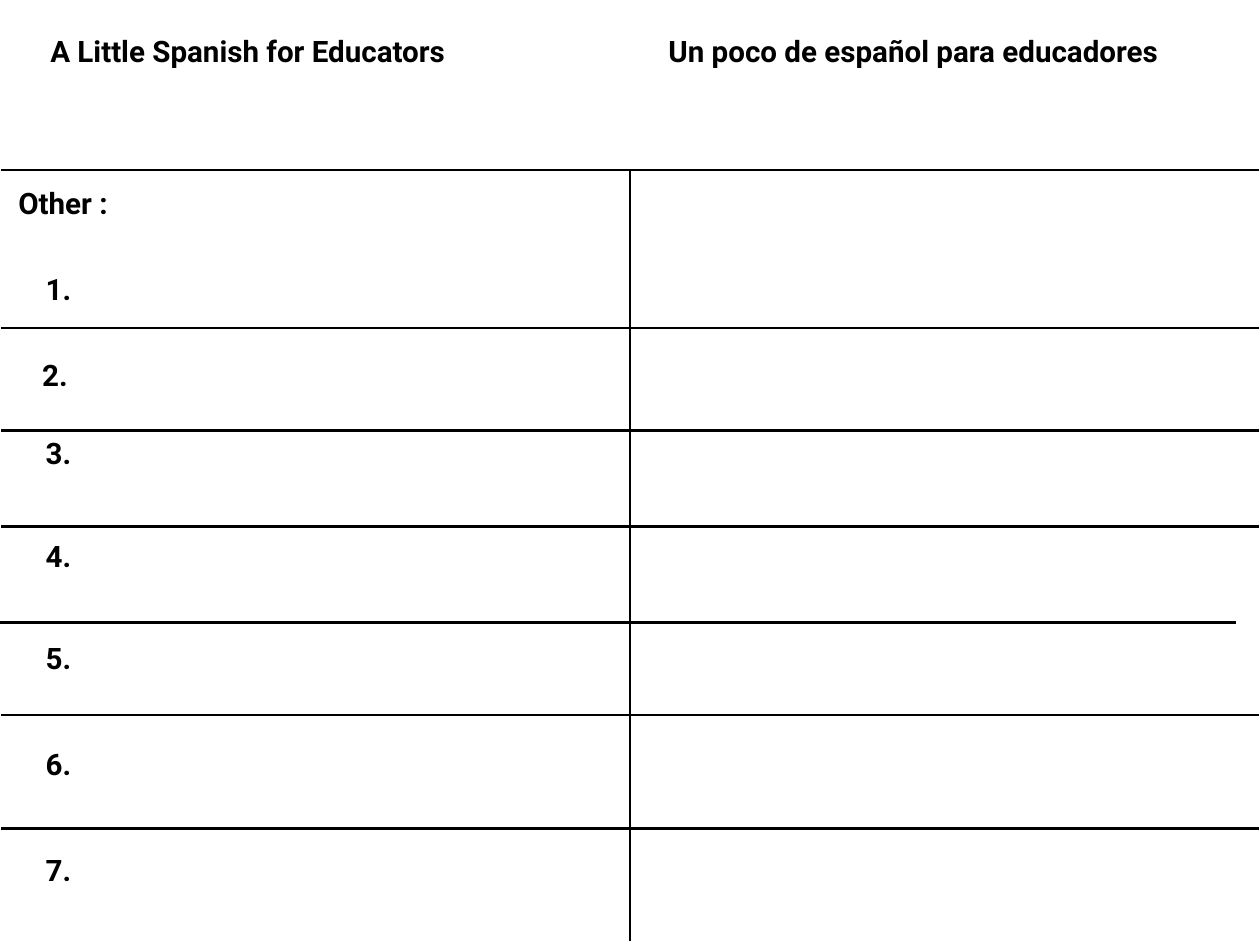
import pptx
import pptx.util
import pptx.dml.color
import pptx.enum.shapes
import pptx.enum.text
import pptx.oxml.ns
import lxml.etree

COLORS = {"ink": "000000", "paper": "FFFFFF"}
FONT = {"name": "Roboto", "size": pptx.util.Pt(24), "bold": True}
FRAME = {
    "word_wrap": False,
    "auto_size": pptx.enum.text.MSO_AUTO_SIZE.SHAPE_TO_FIT_TEXT,
    "vertical_anchor": pptx.enum.text.MSO_ANCHOR.MIDDLE,
    **{f"margin_{side}": pptx.util.Inches(0.06)
       for side in ("left", "top", "right", "bottom")},
}

# Percentages of the slide's width or height
LEFT, MIDDLE, RIGHT = 0.07, 50, 99.93
HEADER_LINE, BOTTOM = 18, 99.53
TEXT_HEIGHT = 4.69
LABELS = [
    ("A Little Spanish for Educators", 3.57, 3, 34.25),
    ("Un poco de español para educadores", 52.63, 3, 42.76),
    ("Other :", 1.03, 19.12, 9.14),
]
NUMBER_LEFT, NUMBER_WIDTH = 3.2, 3.1
NUMBER_TOPS = [28.21, 37.3, 45.55, 56.42, 67.29, 78.44, 89.69]
NUMBER_SHIFTS = {2: -0.28}
ROW_LINES = [HEADER_LINE, 34.7, 45.55, 55.7, 75.66, 87.66]
SHORT_LINE, SHORT_RIGHT = 65.89, 98.1


def color(name):
    return pptx.dml.color.RGBColor.from_string(COLORS[name])


def apply(target, values):
    for name, value in values.items():
        setattr(target, name, value)


class Sheet:
    """The worksheet slide, placed in percentages of its size."""

    def __init__(self, prs):
        self.width, self.height = prs.slide_width, prs.slide_height
        self.s = prs.slides.add_slide(prs.slide_layouts[6])
        fill = self.s.background.fill
        fill.solid()
        fill.fore_color.rgb = color("paper")

    def x(self, share):
        return round(self.width * share / 100)

    def y(self, share):
        return round(self.height * share / 100)

    def line(self, x1, y1, x2, y2):
        sp = self.s.shapes.add_connector(
            pptx.enum.shapes.MSO_CONNECTOR.STRAIGHT,
            self.x(x1), self.y(y1), self.x(x2), self.y(y2))
        sp.line.width = pptx.util.Pt(2)
        sp.line.color.rgb = color("ink")
        lxml.etree.SubElement(sp._element.spPr, pptx.oxml.ns.qn("a:effectLst"))

    def text(self, words, left, top, width):
        sp = self.s.shapes.add_textbox(
            self.x(left), self.y(top), self.x(width), self.y(TEXT_HEIGHT))
        tf = sp.text_frame
        apply(tf, FRAME)
        r = tf.paragraphs[0].add_run()
        r.text = words
        apply(r.font, FONT)
        r.font.color.rgb = color("ink")


def main():
    prs = pptx.Presentation()
    prs.slide_width = pptx.util.Inches(14.22)
    prs.slide_height = pptx.util.Inches(10.67)
    sheet = Sheet(prs)

    for y in ROW_LINES:
        sheet.line(LEFT, y, RIGHT, y)
    sheet.line(0, SHORT_LINE, SHORT_RIGHT, SHORT_LINE)
    sheet.line(MIDDLE, HEADER_LINE, MIDDLE, BOTTOM)

    for label in LABELS:
        sheet.text(*label)
    for number, top in enumerate(NUMBER_TOPS, 1):
        left = NUMBER_LEFT + NUMBER_SHIFTS.get(number, 0)
        sheet.text(f"{number}.", left, top, NUMBER_WIDTH)

    prs.save("out.pptx")


if __name__ == "__main__":
    main()
